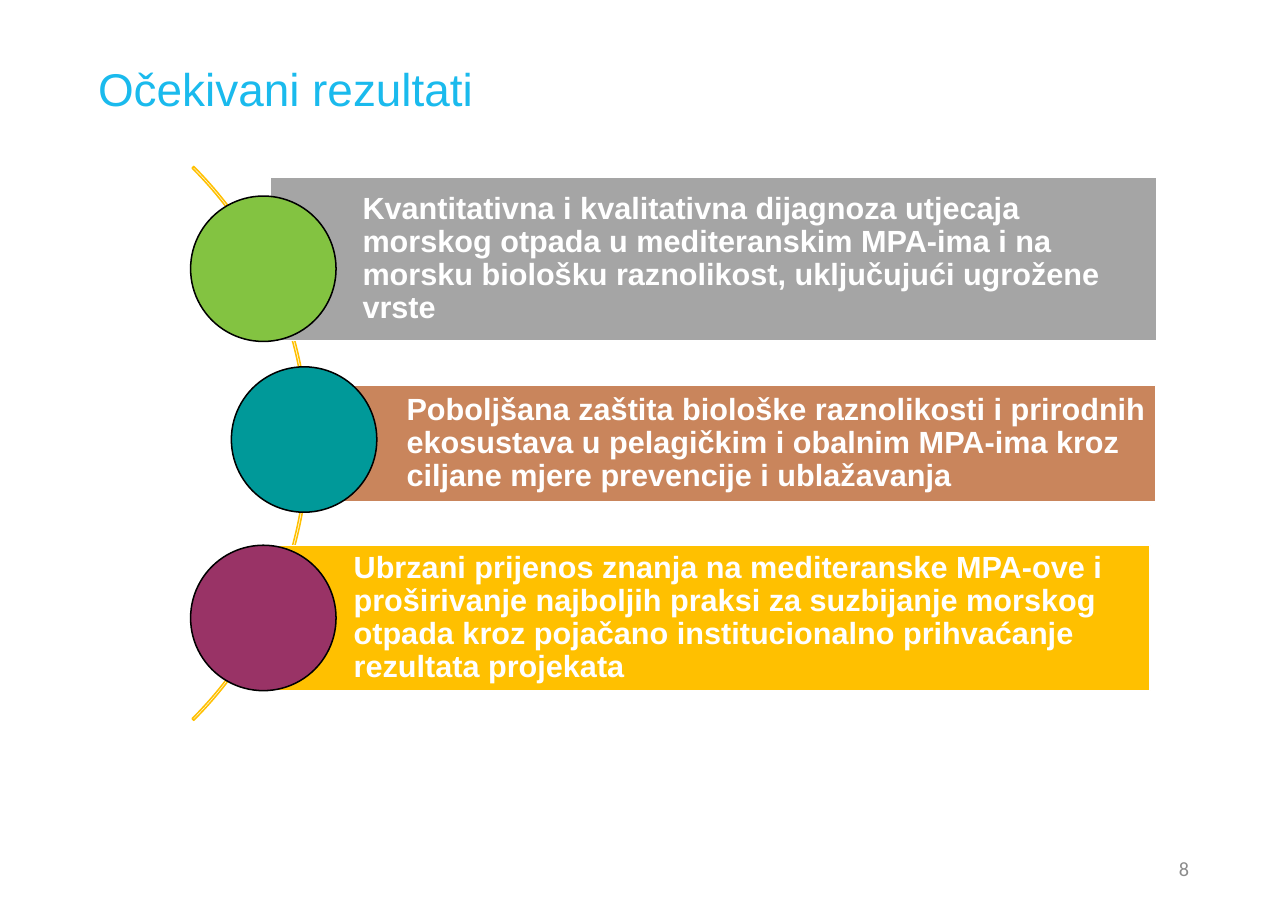
import pptx
import pptx.dml.color
import pptx.enum.shapes
import pptx.enum.text
import pptx.util

EMU_PER_PX = 9144
CIRCLE_SIZE = 132
SHAPES = pptx.enum.shapes.MSO_SHAPE
ALIGN = pptx.enum.text.PP_ALIGN
ANCHOR = pptx.enum.text.MSO_ANCHOR

RESULTS = [
    ("Kvantitativna i kvalitativna dijagnoza utjecaja morskog otpada u mediteranskim "
     "MPA-ima i na morsku biološku raznolikost, uključujući ugrožene vrste",
     (245, 161, 805, 148), "A5A5A5", (173, 178), "83C341"),
    ("Poboljšana zaštita biološke raznolikosti i prirodnih ekosustava u pelagičkim "
     "i obalnim MPA-ima kroz ciljane mjere prevencije i ublažavanja",
     (285, 350, 764, 106), "C9855C", (210, 333), "009999"),
    ("Ubrzani prijenos znanja na mediteranske MPA-ove i proširivanje najboljih praksi "
     "za suzbijanje morskog otpada kroz pojačano institucionalno prihvaćanje rezultata projekata",
     (237, 495, 807, 132), "FFC000", (173, 495), "993366"),
]


def px(length):
    return pptx.util.Emu(length * EMU_PER_PX)


def color(value):
    return pptx.dml.color.RGBColor.from_string(value)


def add_shape(page, kind, bounds, fill, line):
    shape = page.shapes.add_shape(kind, *map(px, bounds))
    shape.shadow.inherit = False
    if fill:
        shape.fill.solid()
        shape.fill.fore_color.rgb = color(fill)
    else:
        shape.fill.background()
    shape.line.color.rgb = color(line)
    shape.line.width = pptx.util.Pt(1)
    return shape


def set_text(box, text, size, ink, margins, font="Arial", bold=False,
             align=ALIGN.LEFT, anchor=ANCHOR.MIDDLE, spacing=0.9):
    frame = box.text_frame
    frame.text = text
    frame.word_wrap = True
    frame.vertical_anchor = anchor
    frame.margin_left, frame.margin_top, frame.margin_right, frame.margin_bottom = map(px, margins)
    para = frame.paragraphs[0]
    para.alignment = align
    para.line_spacing = spacing
    span = para.runs[0]
    span.font.name = font
    span.font.size = pptx.util.Pt(size)
    span.font.bold = bold
    span.font.color.rgb = color(ink)


def add_label(page, bounds, text, size, ink, margins, **style):
    box = page.shapes.add_textbox(*map(px, bounds))
    set_text(box, text, size, ink, margins, **style)


def add_arc(page):
    arc = add_shape(page, SHAPES.BLOCK_ARC, (-431, 47, 711, 711), None, "FFC000")
    for index, value in enumerate((189, 27, 0.003)):
        arc.adjustments[index] = value


def add_result(page, text, bounds, fill, corner, circle_fill):
    bar = add_shape(page, SHAPES.RECTANGLE, bounds, fill, "FFFFFF")
    set_text(bar, text, 20, "FFFFFF", (84, 6, 6, 6), bold=True)
    add_shape(page, SHAPES.OVAL, (*corner, CIRCLE_SIZE, CIRCLE_SIZE), circle_fill, "000000")


def main():
    deck = pptx.Presentation()
    deck.slide_width, deck.slide_height = px(1169), px(827)
    page = deck.slides.add_slide(deck.slide_layouts[6])
    add_label(page, (77, 55, 381, 57), "Očekivani rezultati", 30, "1ABAED",
              (12, 6, 12, 6), anchor=ANCHOR.TOP)
    add_label(page, (1018, 766, 71, 44), "8", 13.2, "8C8C8C", (10, 5, 10, 5),
              font="Calibri", align=ALIGN.RIGHT, spacing=1.0)
    add_arc(page)
    for result in RESULTS:
        add_result(page, *result)
    deck.save("out.pptx")


if __name__ == "__main__":
    main()
